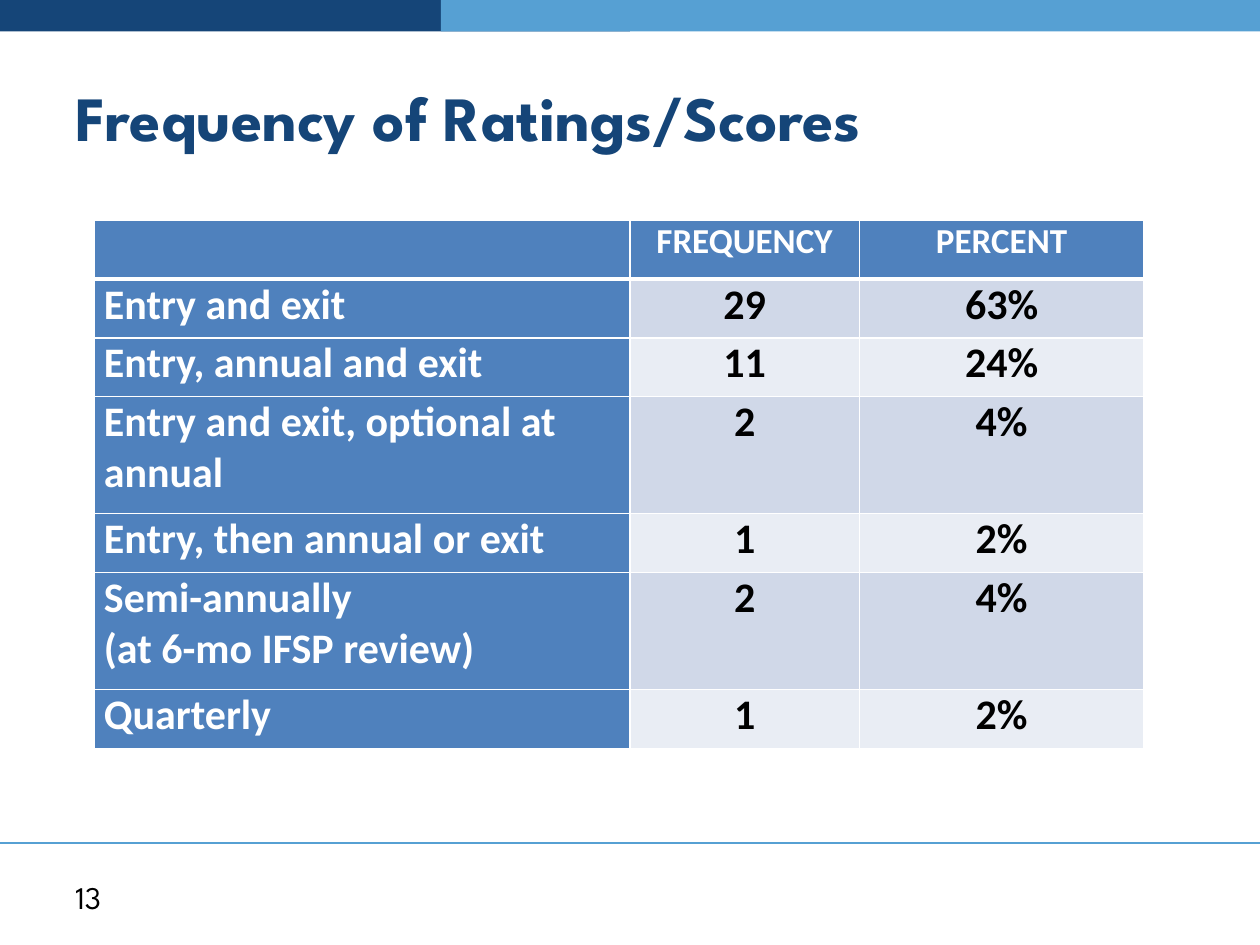
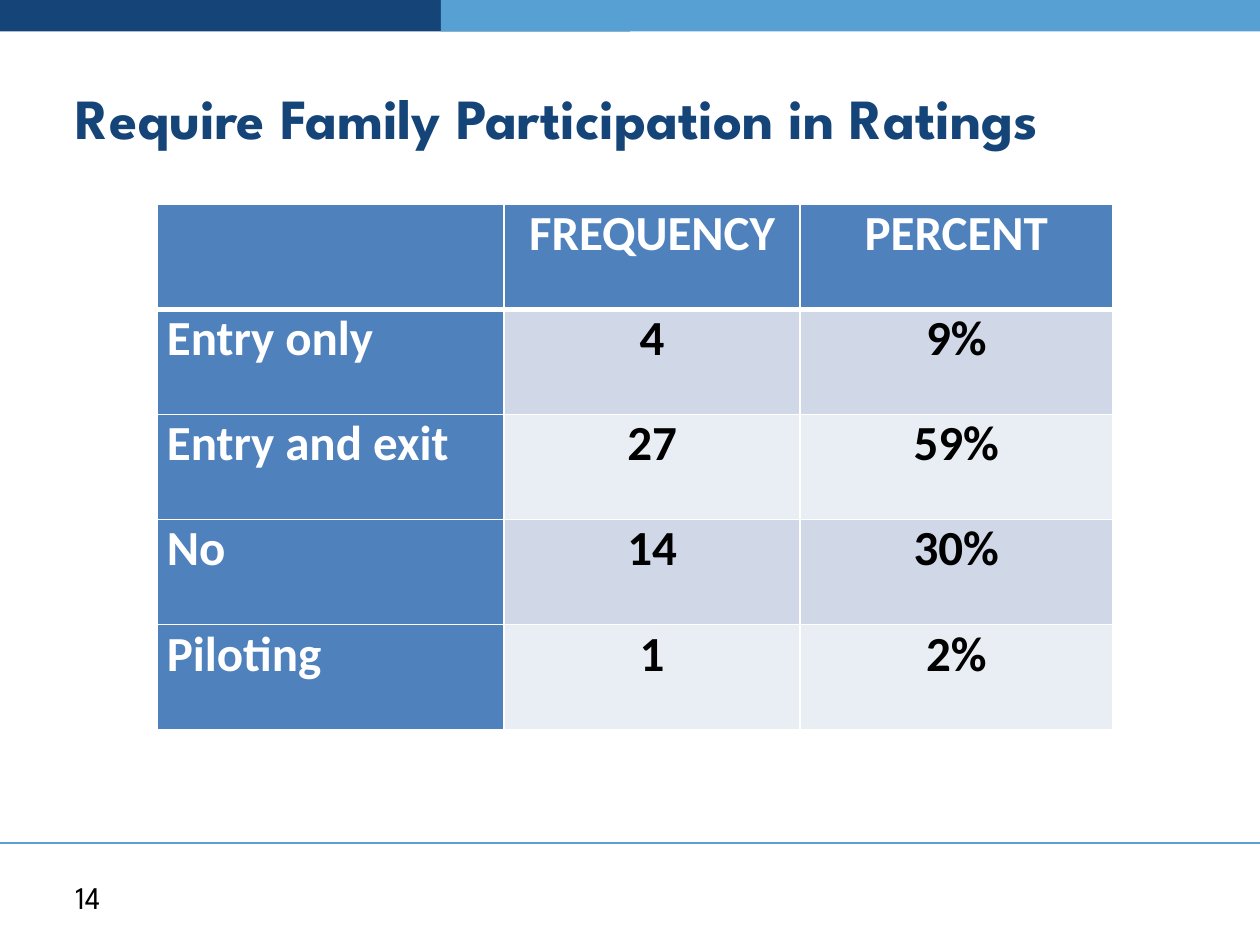
from dataclasses import dataclass

from lxml.etree import SubElement
from pptx import Presentation
from pptx.dml.color import RGBColor
from pptx.enum.shapes import MSO_CONNECTOR, MSO_SHAPE
from pptx.enum.text import MSO_ANCHOR, MSO_AUTO_SIZE, PP_ALIGN
from pptx.oxml import parse_xml
from pptx.oxml.ns import nsdecls, qn
from pptx.util import Inches, Pt


@dataclass(frozen=True)
class Theme:
    navy: str = "154578"
    sky: str = "56A0D3"
    head: str = "4F81BD"
    odd: str = "D0D8E8"
    even: str = "E9EDF4"
    white: str = "FFFFFF"
    black: str = "000000"
    brand: str = "League Spartan"
    body: str = "Calibri"
    number: float = 18
    inset: float = 5.4
    thin: float = 1
    thick: float = 3


THEME = Theme()
HEADS = ["", "FREQUENCY", "PERCENT"]


def style(frame, face, size, color, bold=False, align=PP_ALIGN.LEFT):
    for para in frame.paragraphs:
        para.alignment = align
        for run in para.runs:
            font = run.font
            font.name, font.size, font.bold = face, Pt(size), bold
            font.color.rgb = RGBColor.from_string(color)


def add_bands(slide, box):
    """Navy band on the left half, overlapped by a sky band from 35% on."""
    left, top, width, height = box
    parts = [(0, 0.5, THEME.navy), (0.35, 0.65, THEME.sky)]
    for start, share, color in parts:
        band = slide.shapes.add_shape(
            MSO_SHAPE.RECTANGLE, Inches(left + start * width), Inches(top),
            Inches(share * width), Inches(height))
        band.shadow.inherit = False
        band.fill.solid()
        band.fill.fore_color.rgb = RGBColor.from_string(color)
        band.line.fill.background()


def add_footer(slide, box, number):
    """Rule across the top of the box, page number below it."""
    left, top, width, _ = box
    rule = slide.shapes.add_connector(
        MSO_CONNECTOR.STRAIGHT, Inches(left), Inches(top),
        Inches(left + width), Inches(top))
    rule.line.color.rgb = RGBColor.from_string(THEME.sky)
    rule.line.width = Pt(1.5)
    SubElement(rule._element.spPr, qn("a:effectLst"))

    label = slide.shapes.add_textbox(
        Inches(left + 0.5), Inches(top + 0.23), Inches(2.33), Inches(0.4))
    frame = label.text_frame
    frame.word_wrap = True
    frame.vertical_anchor = MSO_ANCHOR.MIDDLE
    frame.text = str(number)
    style(frame, THEME.brand, THEME.number, THEME.black)


def set_title(slide, box, text, size):
    title = slide.shapes.title
    title.left, title.top, title.width, title.height = map(Inches, box)
    frame = title.text_frame
    frame.text = text
    frame.word_wrap = True
    frame.auto_size = MSO_AUTO_SIZE.NONE
    frame.vertical_anchor = MSO_ANCHOR.MIDDLE
    style(frame, THEME.brand, size, THEME.navy, bold=True)


def set_edges(cell, top, bottom):
    """White borders; they come before the fill in the cell properties."""
    props = cell._tc.get_or_add_tcPr()
    edges = {"lnL": THEME.thin, "lnR": THEME.thin, "lnT": top, "lnB": bottom}
    for place, (tag, width) in enumerate(edges.items()):
        props.insert(place, parse_xml(
            f'<a:{tag} {nsdecls("a")} w="{Pt(width)}"><a:solidFill>'
            f'<a:srgbClr val="{THEME.white}"/></a:solidFill></a:{tag}>'))


def fill_cell(cell, text, row, col, size):
    head = row == 0 or col == 0
    stripe = THEME.odd if row % 2 else THEME.even
    cell.margin_left = cell.margin_right = Pt(THEME.inset)
    cell.margin_top = cell.margin_bottom = 0
    cell.fill.solid()
    cell.fill.fore_color.rgb = RGBColor.from_string(THEME.head if head else stripe)
    set_edges(cell, THEME.thick if row == 1 else THEME.thin,
              THEME.thick if row == 0 else THEME.thin)
    cell.text_frame.text = text
    style(cell.text_frame, THEME.body, size, THEME.white if head else THEME.black,
          bold=True, align=PP_ALIGN.CENTER if col else PP_ALIGN.LEFT)


def add_grid(slide, box, cols, rows, sizes, units):
    """Table with a heading row; units are the relative row heights."""
    data = [HEADS, *rows]
    shape = slide.shapes.add_table(len(data), len(cols), *map(Inches, box))
    table = shape.table
    for col, width in zip(table.columns, cols):
        col.width = Inches(width)
    for row, unit in zip(table.rows, units):
        row.height = Inches(box[3] * unit / sum(units))
    for r, row in enumerate(data):
        for c, text in enumerate(row):
            fill_cell(table.cell(r, c), text, r, c, sizes[min(r, 1)])


def add_page(deck, number, title, size, **grid):
    slide = deck.slides.add_slide(deck.slide_layouts[5])
    add_footer(slide, (0, 6.69, 10, 0.81), number)
    add_bands(slide, (0, -1.25, 10, 1.5))
    set_title(slide, (0.5, 0.3, 9, 1.25), title, size)
    add_grid(slide, **grid)


def main():
    deck = Presentation()
    deck.slide_width, deck.slide_height = Inches(10), Inches(7.5)

    # How often ratings are made
    add_page(
        deck, 13, "Frequency of Ratings/Scores", 36,
        box=(0.75, 1.75, 8.33, 4.19), cols=[4.25, 1.82, 2.26],
        sizes=(20, 24), units=[1, 1, 1, 2, 1, 2, 1],
        rows=[
            ("Entry and exit", "29", "63%"),
            ("Entry, annual and exit", "11", "24%"),
            ("Entry and exit, optional at annual", "2", "4%"),
            ("Entry, then annual or exit", "1", "2%"),
            ("Semi-annually\n(at 6-mo IFSP review)", "2", "4%"),
            ("Quarterly", "1", "2%"),
        ])

    # Whether families must take part
    add_page(
        deck, 14, "Require Family Participation in Ratings", 32.4,
        box=(1.25, 1.62, 7.58, 4.17), cols=[2.75, 2.35, 2.48],
        sizes=(28, 28), units=[1] * 5,
        rows=[
            ("Entry only", "4", "9%"),
            ("Entry and exit", "27", "59%"),
            ("No", "14", "30%"),
            ("Piloting", "1", "2%"),
        ])

    deck.save("out.pptx")


if __name__ == "__main__":
    main()
